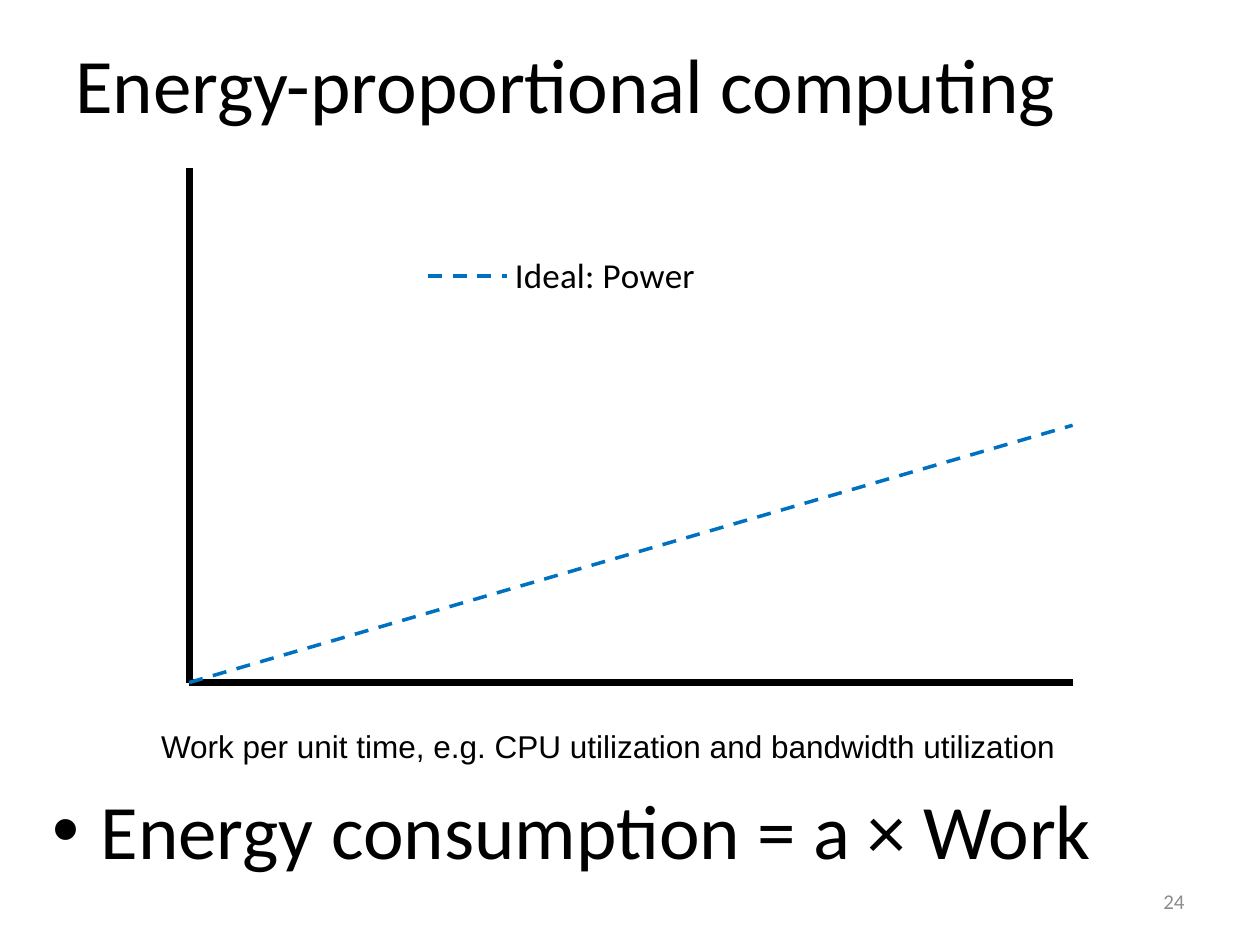
from lxml import etree
from pptx import Presentation, util as u
from pptx.chart.data import XyChartData
from pptx.dml.color import RGBColor
from pptx.enum import chart as charts, dml, text
from pptx.oxml.ns import qn

BLACK = "000000"
BLUE = "0070C0"


def color(value):
    """Turn a hex string into a colour."""
    return RGBColor.from_string(value)


def add_text(page, box, words, size, font="Calibri", fill=BLACK,
             align=text.PP_ALIGN.LEFT, anchor=text.MSO_ANCHOR.TOP):
    """Place one paragraph of text in a box and return the paragraph."""
    frame = page.shapes.add_textbox(*map(u.Inches, box)).text_frame
    frame.word_wrap = True
    frame.vertical_anchor = anchor
    para = frame.paragraphs[0]
    para.alignment = align
    span = para.add_run()
    span.text = words
    span.font.size = u.Pt(size)
    span.font.name = font
    span.font.color.rgb = color(fill)
    return para


def add_bullet(page, box, words, size):
    """Place one bulleted line with a hanging indent."""
    properties = add_text(page, box, words, size)._p.get_or_add_pPr()
    properties.set("marL", str(u.Inches(0.38)))
    properties.set("indent", str(-u.Inches(0.38)))
    etree.SubElement(properties, qn("a:buFont")).set("typeface", "Arial")
    etree.SubElement(properties, qn("a:buChar")).set("char", "•")


def set_layout(parent, index, **values):
    """Fix the position of a chart part as fractions of the chart."""
    for old in parent.findall(qn("c:layout")):
        parent.remove(old)
    layout = etree.Element(qn("c:layout"))
    manual = etree.SubElement(layout, qn("c:manualLayout"))
    for name, value in values.items():
        etree.SubElement(manual, qn(f"c:{name}")).set("val", str(value))
    parent.insert(index, layout)


def style_axis(axis, maximum):
    """Leave only a heavy black line on an axis."""
    axis.minimum_scale = 0
    axis.maximum_scale = maximum
    axis.has_major_gridlines = False
    axis.major_tick_mark = axis.minor_tick_mark = charts.XL_TICK_MARK.NONE
    axis.tick_label_position = charts.XL_TICK_LABEL_POSITION.NONE
    axis.format.line.width = u.Pt(4)
    axis.format.line.color.rgb = color(BLACK)


def add_power_chart(page, box):
    """Draw ideal power against work as a dashed scatter line."""
    data = XyChartData()
    ideal = data.add_series("Ideal: Power")
    for work in (0, 1, 20, 40, 80, 100):
        ideal.add_data_point(work, work)
    chart = page.shapes.add_chart(
        charts.XL_CHART_TYPE.XY_SCATTER_SMOOTH_NO_MARKERS,
        *map(u.Inches, box), data).chart
    chart.has_title = False
    chart.font.name = "Calibri"
    chart.font.size = u.Pt(10)
    chart.font.color.rgb = color(BLACK)
    style_axis(chart.category_axis, 100)
    style_axis(chart.value_axis, 200)

    plot = chart.plots[0]
    plot.vary_by_categories = False
    series = plot.series[0]
    series.smooth = True
    series.marker.style = charts.XL_MARKER_STYLE.NONE
    series.format.line.width = u.Pt(2)
    series.format.line.color.rgb = color(BLUE)
    series.format.line.dash_style = dml.MSO_LINE.DASH

    chart.has_legend = True
    legend = chart.legend
    legend.position = charts.XL_LEGEND_POSITION.RIGHT
    legend.include_in_layout = False
    legend.font.size = u.Pt(20)
    legend.font.name = "Calibri"
    legend.font.color.rgb = color(BLACK)
    set_layout(legend._element, 1, xMode="edge", yMode="edge",
               x=0.29, y=0.2, w=0.31, h=0.11)
    set_layout(chart._chartSpace.chart.plotArea, 0, layoutTarget="inner",
               xMode="edge", yMode="edge", x=0.07, y=0.07, w=0.89, h=0.88)


def build_slide(deck):
    """Lay out the title, chart, axis caption, formula and page number."""
    page = deck.slides.add_slide(deck.slide_layouts[6])
    middle = text.MSO_ANCHOR.MIDDLE
    add_text(page, (0.5, 0.03, 9, 1.25), "Energy-proportional computing", 44,
             anchor=middle)
    add_bullet(page, (0.32, 6.16, 9.68, 0.82),
               "Energy consumption = a × Work", 44)
    add_text(page, (7.17, 6.95, 2.33, 0.4), "24", 12, fill="8C8C8C",
             align=text.PP_ALIGN.RIGHT, anchor=middle)
    add_text(page, (1.18, 5.72, 7.61, 0.4),
             "Work per unit time, e.g. CPU utilization and bandwidth "
             "utilization", 18, font="Arial")
    add_power_chart(page, (0.95, 1.01, 7.88, 4.64))


def main():
    """Build the deck and save it."""
    deck = Presentation()
    deck.slide_width = u.Inches(10)
    deck.slide_height = u.Inches(7.5)
    build_slide(deck)
    deck.save("out.pptx")


if __name__ == "__main__":
    main()
